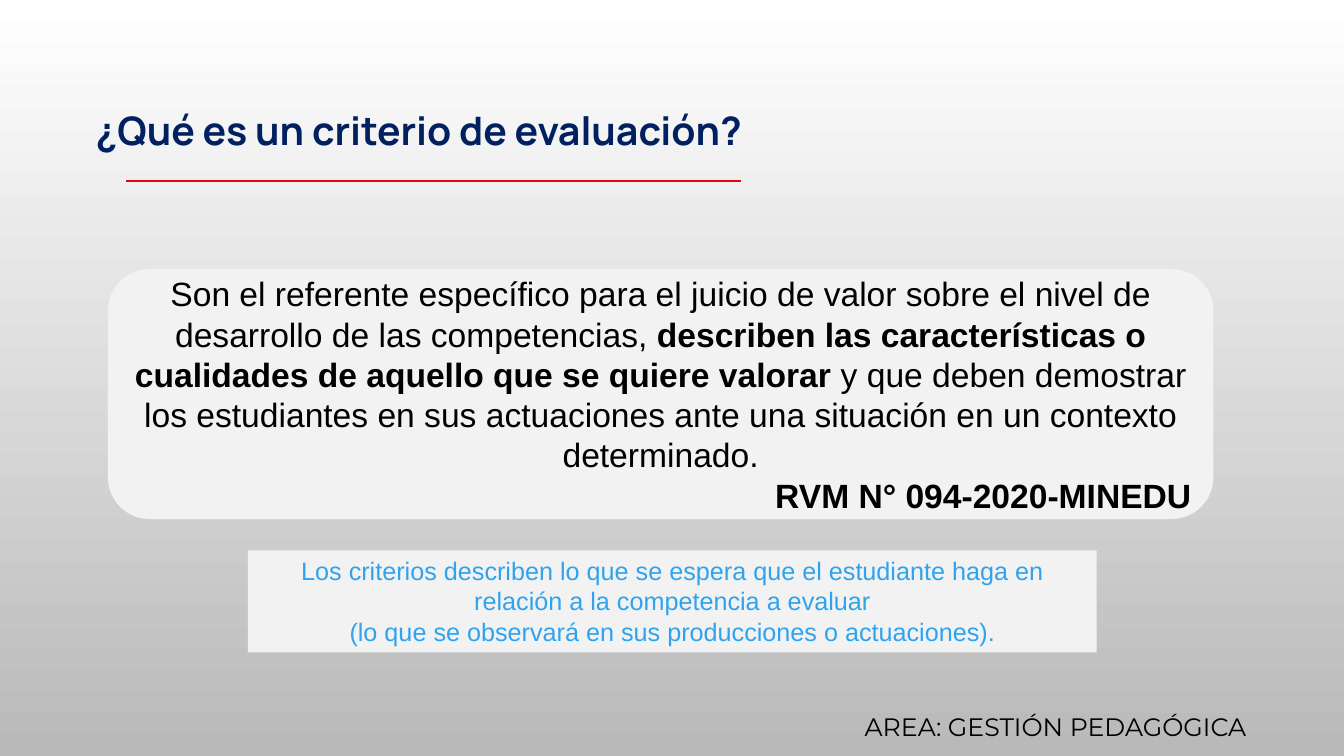
from dataclasses import dataclass
from typing import Optional

from pptx import Presentation
from pptx.dml.color import RGBColor
from pptx.enum.shapes import MSO_CONNECTOR, MSO_SHAPE
from pptx.enum.text import MSO_ANCHOR, MSO_AUTO_SIZE, PP_ALIGN
from pptx.oxml import parse_xml
from pptx.oxml.ns import nsdecls
from pptx.shapes.base import BaseShape
from pptx.slide import Slide
from pptx.util import Cm, Pt

WHITE = RGBColor(0xFF, 0xFF, 0xFF)
GRAY = RGBColor(0xB9, 0xB9, 0xB9)
PANEL = RGBColor(0xF2, 0xF2, 0xF2)
BLACK = RGBColor(0x00, 0x00, 0x00)
NAVY = RGBColor(0x00, 0x20, 0x60)
BLUE = RGBColor(0x2F, 0xA3, 0xEE)
RED = RGBColor(0xE3, 0x04, 0x12)


@dataclass(frozen=True)
class Line:
    runs: tuple[str, ...]
    alignment: PP_ALIGN = PP_ALIGN.CENTER
    bold_run: Optional[int] = None


@dataclass(frozen=True)
class Block:
    left: float
    top: float
    width: float
    height: float
    lines: tuple[Line, ...]
    font: str
    size: int
    color: RGBColor
    anchor: MSO_ANCHOR = MSO_ANCHOR.TOP
    auto_size: MSO_AUTO_SIZE = MSO_AUTO_SIZE.SHAPE_TO_FIT_TEXT
    outline: Optional[MSO_SHAPE] = None


TITLE = Block(
    2.16, 2.46, 18.03, 1.5,
    (Line(("¿Qué es un criterio de evaluación?",), PP_ALIGN.LEFT, 0),),
    "Manrope", 28, NAVY,
)

BLOCKS = (
    Block(
        2.72, 6.78, 27.86, 6.3,
        (
            Line(
                (
                    "Son el referente específico para el juicio de valor sobre el nivel "
                    "de desarrollo de las competencias, ",
                    "describen las características o cualidades de aquello que se quiere valorar",
                    " y que deben demostrar los estudiantes en sus actuaciones ante una "
                    "situación en un contexto determinado.",
                ),
                bold_run=1,
            ),
            Line(("RVM N° 094-2020-MINEDU",), PP_ALIGN.RIGHT, 0),
        ),
        "Arial", 24, BLACK, MSO_ANCHOR.MIDDLE, MSO_AUTO_SIZE.NONE,
        MSO_SHAPE.ROUNDED_RECTANGLE,
    ),
    Block(
        6.25, 13.87, 21.39, 2.57,
        (
            Line((
                "Los criterios describen lo que se espera que el estudiante haga en "
                "relación a la competencia a evaluar",
            )),
            Line(("(lo que se observará en sus producciones o actuaciones).",)),
        ),
        "Arial", 18, BLUE, outline=MSO_SHAPE.RECTANGLE,
    ),
    Block(
        21.54, 17.81, 11.15, 1.02,
        (Line(("AREA: GESTIÓN PEDAGÓGICA",), PP_ALIGN.LEFT),),
        "Montserrat", 18, BLACK,
    ),
)


def write_text(shape: BaseShape, block: Block) -> None:
    text_frame = shape.text_frame
    text_frame.text = "\n".join("" for _ in block.lines)
    text_frame.word_wrap = True
    text_frame.vertical_anchor = block.anchor
    text_frame.auto_size = block.auto_size
    for paragraph, line in zip(text_frame.paragraphs, block.lines):
        paragraph.alignment = line.alignment
        paragraph.space_before = Pt(0)
        for index, text in enumerate(line.runs):
            run = paragraph.add_run()
            run.text = text
            run.font.name = block.font
            run.font.size = Pt(block.size)
            run.font.bold = index == line.bold_run
            run.font.color.rgb = block.color


def add_block(slide: Slide, block: Block) -> None:
    place = (Cm(block.left), Cm(block.top), Cm(block.width), Cm(block.height))
    if block.outline is None:
        shape = slide.shapes.add_textbox(*place)
    else:
        shape = slide.shapes.add_shape(block.outline, *place)
        shape.shadow.inherit = False
        shape.fill.solid()
        shape.fill.fore_color.rgb = PANEL
        shape.line.fill.background()
    write_text(shape, block)


def add_title(slide: Slide) -> None:
    title = slide.shapes.title
    title.left, title.top = Cm(TITLE.left), Cm(TITLE.top)
    title.width, title.height = Cm(TITLE.width), Cm(TITLE.height)
    write_text(title, TITLE)
    paragraph = title.text_frame.paragraphs[0]
    paragraph.line_spacing = 1.07
    paragraph.space_after = Pt(8)


def add_underline(slide: Slide) -> None:
    underline = slide.shapes.add_connector(
        MSO_CONNECTOR.STRAIGHT, Cm(3.18), Cm(4.55), Cm(18.67), Cm(4.55)
    )
    underline.line.color.rgb = RED
    underline.line.width = Pt(1.5)
    underline._element.spPr.append(parse_xml(f"<a:effectLst {nsdecls('a')}/>"))


def set_background(slide: Slide) -> None:
    fill = slide.background.fill
    fill.gradient()
    fill.gradient_angle = 270
    for stop, color, position in zip(fill.gradient_stops, (WHITE, GRAY), (0, 1)):
        stop.color.rgb = color
        stop.position = position


def main() -> None:
    presentation = Presentation()
    presentation.slide_width = Cm(33.87)
    presentation.slide_height = Cm(19.05)
    slide = presentation.slides.add_slide(presentation.slide_layouts[5])
    set_background(slide)
    add_underline(slide)
    for block in BLOCKS:
        add_block(slide, block)
    add_title(slide)
    presentation.save("out.pptx")


if __name__ == "__main__":
    main()
